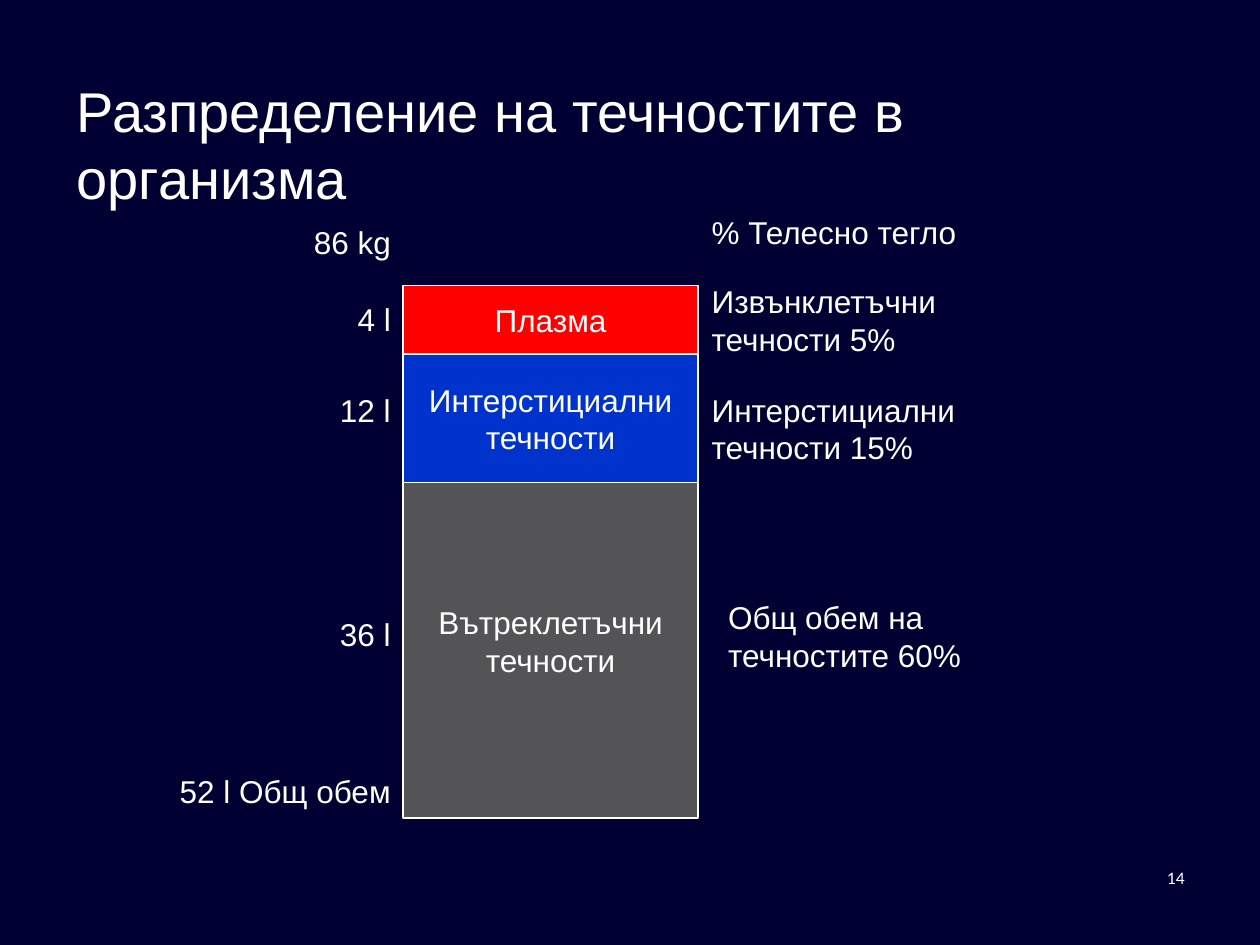
"""Build a slide on how fluids are distributed in the body."""
from pptx import Presentation
from pptx.dml.color import RGBColor as Rgb
from pptx.enum.shapes import MSO_SHAPE as Kind
from pptx.enum.text import MSO_ANCHOR as Anchor, PP_ALIGN as Align
from pptx.util import Pt

WHITE = "FFFFFF"
TITLE = "Разпределение на течностите в организма"
BAR_X, BAR_Y, BAR_W = 230.4, 163.2, 168.5
PARTS = [
    ("Плазма", 39.2, "FF0000", Kind.RECTANGLE, 3.6),
    ("Интерстициални течности", 73.4, "0033CC", Kind.FLOWCHART_PROCESS, 3.6),
    ("Вътреклетъчни течности", 191.5, "545457", Kind.FLOWCHART_PROCESS, 14),
]
AMOUNTS = [
    ("86 kg", 123.8, 59),
    ("4 l", 167.8, 34),
    ("12 l", 219.6, 44),
    ("36 l", 347.8, 44),
    ("52 l Общ обем", 437.8, 136),
]
SHARES = [
    ("% Телесно тегло", 399.6, 118.1, 155.5, 29, False),
    ("Извънклетъчни\nтечности 5%", 399.6, 157.7, 266.4, 72.7, True),
    ("Интерстициални течности 15%", 399.6, 219.6, 225.4, 51, True),
    ("Общ обем на\nтечностите 60%", 409, 338.4, 256.3, 51, True),
]


def color(code):
    return Rgb.from_string(code)


def write(shape, text, size=18, align=Align.LEFT, anchor=Anchor.TOP,
          wrap=True, face="Arial"):
    frame = shape.text_frame
    frame.text = text
    frame.word_wrap = wrap
    frame.vertical_anchor = anchor
    for para in frame.paragraphs:
        para.alignment = align
        for run in para.runs:
            run.font.size = Pt(size)
            run.font.name = face
            run.font.color.rgb = color(WHITE)


def label(slide, text, x, y, w, h, **style):
    box = slide.shapes.add_textbox(Pt(x), Pt(y), Pt(w), Pt(h))
    write(box, text, **style)


def stack(slide):
    y = BAR_Y
    for text, h, fill, kind, pad in PARTS:
        bar = slide.shapes.add_shape(kind, Pt(BAR_X), Pt(y), Pt(BAR_W), Pt(h))
        bar.shadow.inherit = False
        bar.fill.solid()
        bar.fill.fore_color.rgb = color(fill)
        bar.line.color.rgb = color(WHITE)
        bar.line.width = Pt(1)
        write(bar, text, align=Align.CENTER, anchor=Anchor.MIDDLE)
        bar.text_frame.margin_bottom = Pt(pad)
        y += h


def main():
    deck = Presentation()
    deck.slide_width, deck.slide_height = Pt(720), Pt(540)
    slide = deck.slides.add_slide(deck.slide_layouts[6])
    slide.background.fill.solid()
    slide.background.fill.fore_color.rgb = color("000033")
    label(slide, TITLE, 36.7, 21.6, 647.3, 102.2, size=32,
          anchor=Anchor.BOTTOM)
    stack(slide)
    for text, y, w in AMOUNTS:
        label(slide, text, BAR_X - w, y, w, 29, align=Align.RIGHT, wrap=False)
    for text, x, y, w, h, wrap in SHARES:
        label(slide, text, x, y, w, h, wrap=wrap)
    label(slide, "14", 534.2, 491.8, 149.8, 36, size=10, align=Align.RIGHT,
          face="Calibri")
    deck.save("out.pptx")


if __name__ == "__main__":
    main()
